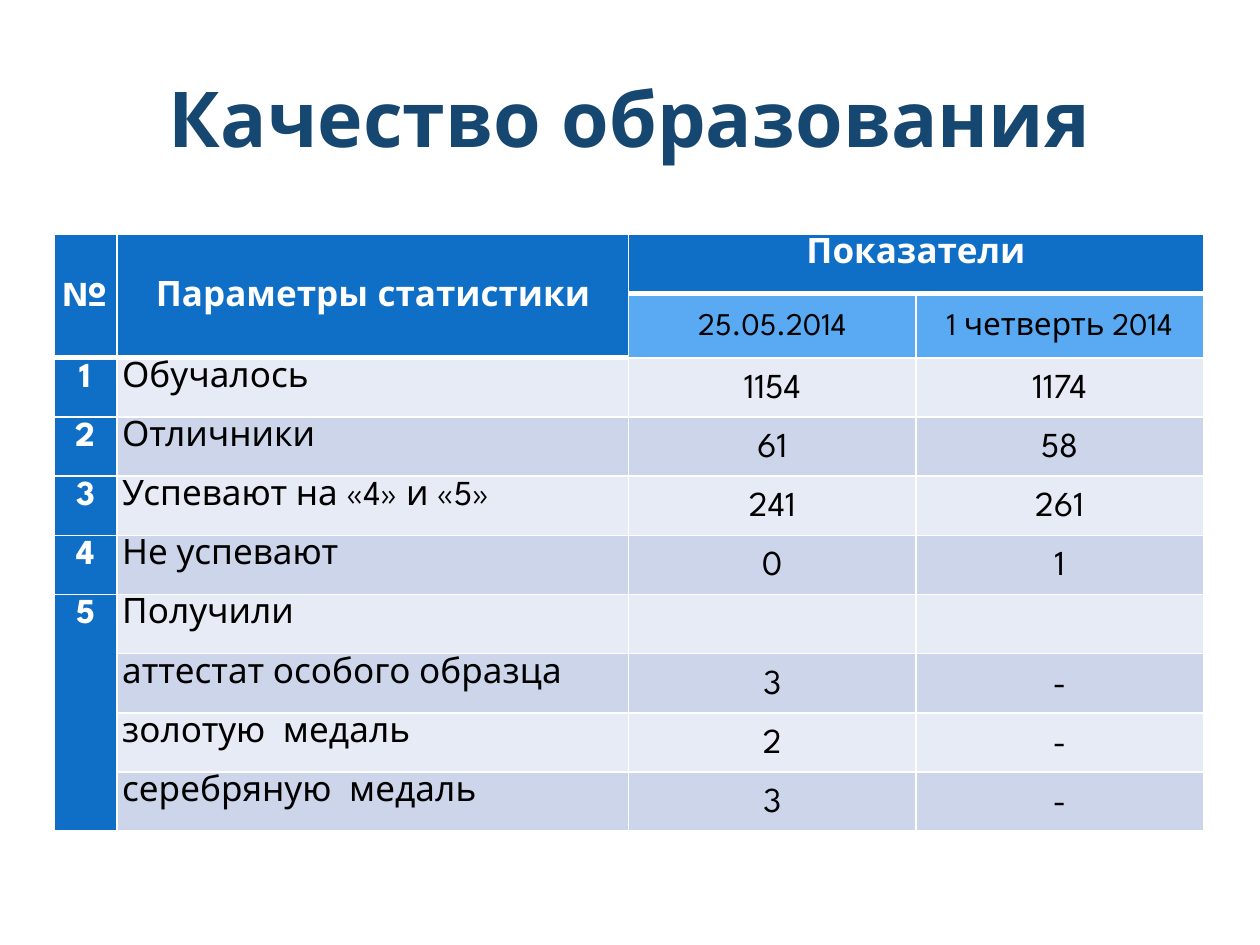
from lxml import etree
from pptx import Presentation
from pptx import util as u
from pptx.dml.color import RGBColor
from pptx.enum import text
from pptx.oxml.ns import qn

FONT = "League Spartan"
WHITE, BLACK = "FFFFFF", "000000"
NAVY, BLUE, LIGHT_BLUE = "164770", "0F6FC6", "59AAF2"
BANDS = ("E7EBF5", "CCD5EA")
CENTER, JUSTIFY, LEFT = (text.PP_ALIGN.CENTER, text.PP_ALIGN.JUSTIFY,
                         text.PP_ALIGN.LEFT)
TOP, MIDDLE = text.MSO_ANCHOR.TOP, text.MSO_ANCHOR.MIDDLE

COLUMN_WIDTHS = (0.5, 4.06, 2.28, 2.28)
ROW_HEIGHT, DATES_HEIGHT = 0.47, 0.51
HEADER_ROWS = 2
STATISTICS = [
    ("1", "Обучалось", "1154", "1174"),
    ("2", "Отличники", "61", "58"),
    ("3", "Успевают на «4» и «5»", "241", "261"),
    ("4", "Не успевают", "0", "1"),
    ("5", "Получили", "", ""),
    ("", "аттестат особого образца", "3", "-"),
    ("", "золотую  медаль", "2", "-"),
    ("", "серебряную  медаль", "3", "-"),
]


def color(hex_string):
    return RGBColor.from_string(hex_string)


def add_run(paragraph, content, size, hex_color, bold):
    run = paragraph.add_run()
    run.text = content
    run.font.name = FONT
    run.font.size = u.Pt(size)
    run.font.bold = bold
    run.font.color.rgb = color(hex_color)


def add_title(slide, content):
    box = slide.shapes.add_textbox(u.Inches(0.5), u.Inches(0.3),
                                   u.Inches(9), u.Inches(1.25))
    frame = box.text_frame
    frame.word_wrap = True
    frame.vertical_anchor = MIDDLE
    paragraph = frame.paragraphs[0]
    paragraph.alignment = CENTER
    add_run(paragraph, content, 44, NAVY, True)


def set_borders(cell, top=1, bottom=1):
    """White lines on all four sides; widths in points."""
    properties = cell._tc.get_or_add_tcPr()
    for side, width in (("L", 1), ("R", 1), ("T", top), ("B", bottom)):
        line = etree.SubElement(properties, qn(f"a:ln{side}"),
                                w=str(u.Pt(width)))
        fill = etree.SubElement(line, qn("a:solidFill"))
        etree.SubElement(fill, qn("a:srgbClr"), val=WHITE)


def style_cell(cell, fill, top=1, bottom=1):
    set_borders(cell, top, bottom)
    cell.fill.solid()
    cell.fill.fore_color.rgb = color(fill)
    cell.margin_left = cell.margin_right = u.Inches(0.04)
    cell.margin_top = cell.margin_bottom = 0


def write_cell(cell, content, align=CENTER, anchor=MIDDLE, size=20,
               hex_color=BLACK, bold=False, space_after=0):
    cell.vertical_anchor = anchor
    paragraph = cell.text_frame.paragraphs[0]
    paragraph.alignment = align
    paragraph.line_spacing = 1.15
    paragraph.space_after = u.Pt(space_after)
    if content:
        add_run(paragraph, content, size, hex_color, bold)


def add_table(slide):
    row_count = HEADER_ROWS + len(STATISTICS)
    frame = slide.shapes.add_table(
        row_count, len(COLUMN_WIDTHS), u.Inches(0.43), u.Inches(1.86),
        u.Inches(sum(COLUMN_WIDTHS)),
        u.Inches(ROW_HEIGHT * (row_count - 1) + DATES_HEIGHT))
    table = frame.table
    table.first_row = table.horz_banding = False
    for column, width in zip(table.columns, COLUMN_WIDTHS):
        column.width = u.Inches(width)
    for index, row in enumerate(table.rows):
        row.height = u.Inches(DATES_HEIGHT if index == 1 else ROW_HEIGHT)
    return table


def fill_header(table):
    for column in range(4):
        is_date = column > 1
        style_cell(table.cell(0, column), BLUE, bottom=3)
        style_cell(table.cell(1, column), LIGHT_BLUE if is_date else BLUE,
                   top=3, bottom=1 if is_date else 3)
    for column in (0, 1):
        table.cell(0, column).merge(table.cell(1, column))
    table.cell(0, 2).merge(table.cell(0, 3))

    headings = (("№", MIDDLE), ("Параметры статистики", MIDDLE),
                ("Показатели", TOP))
    for column, (heading, anchor) in enumerate(headings):
        write_cell(table.cell(0, column), heading, anchor=anchor,
                   hex_color=WHITE, bold=True)
    for column, period in enumerate(("25.05.2014", "1 четверть 2014"), 2):
        write_cell(table.cell(1, column), period, size=18, space_after=10)


def fill_statistics(table):
    for index, (number, name, *values) in enumerate(STATISTICS):
        row = index + HEADER_ROWS
        for column in range(4):
            style_cell(table.cell(row, column),
                       BANDS[index % 2] if column else BLUE,
                       top=3 if index == 0 and column < 2 else 1)
        if number:
            write_cell(table.cell(row, 0), number, anchor=TOP,
                       hex_color=WHITE, bold=True)
        align = LEFT if name.startswith("аттестат") else JUSTIFY
        write_cell(table.cell(row, 1), name, align=align, anchor=TOP)
        for column, value in enumerate(values, 2):
            write_cell(table.cell(row, column), value)
    # The last number covers the three kinds of award
    last_row = HEADER_ROWS + len(STATISTICS) - 1
    table.cell(last_row - 3, 0).merge(table.cell(last_row, 0))


def main():
    presentation = Presentation()
    presentation.slide_width = u.Inches(10)
    presentation.slide_height = u.Inches(7.5)
    slide = presentation.slides.add_slide(presentation.slide_layouts[6])

    # Title
    add_title(slide, "Качество образования")

    # Statistics table
    table = add_table(slide)
    fill_header(table)
    fill_statistics(table)

    presentation.save("out.pptx")


if __name__ == "__main__":
    main()
